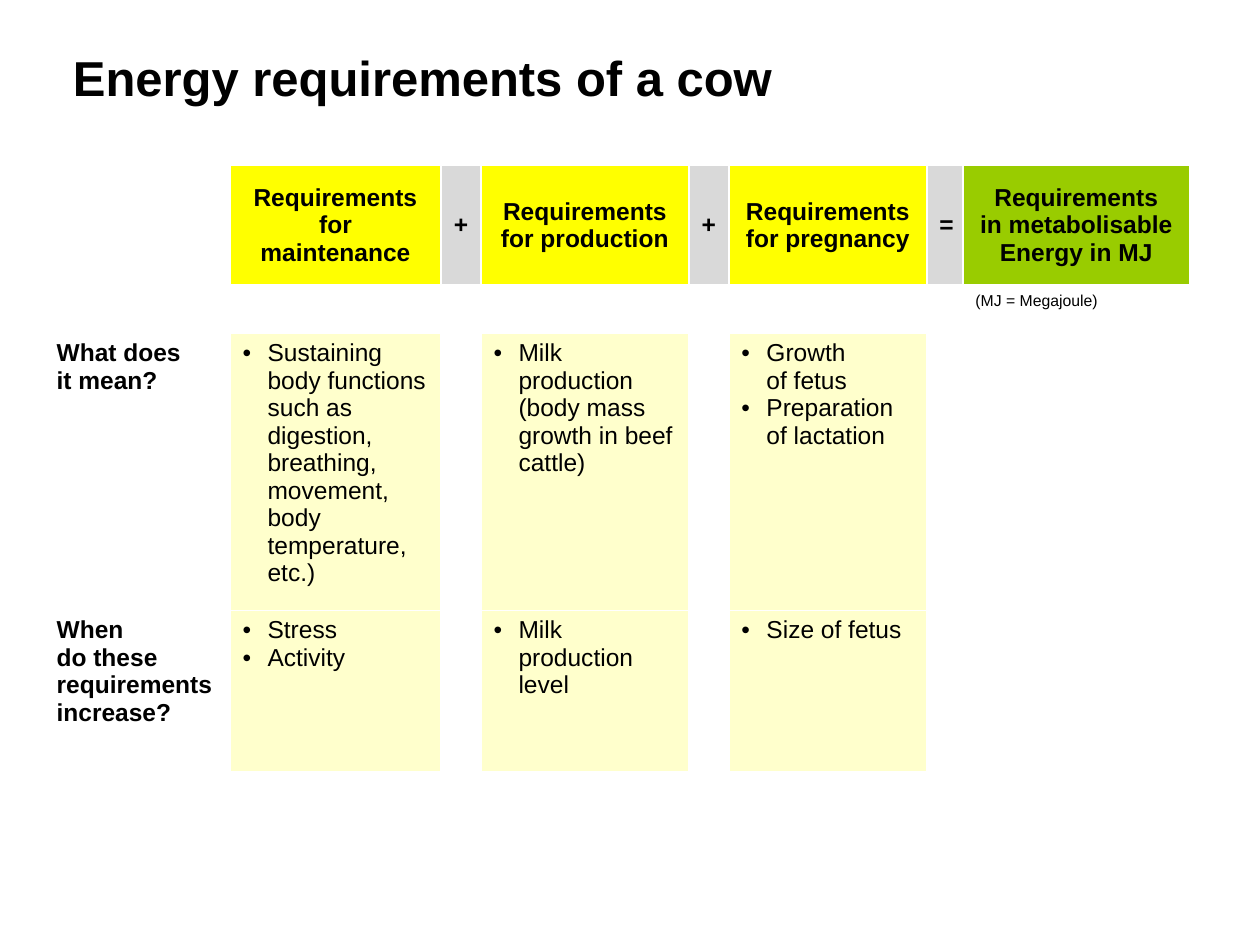
from lxml import etree
from pptx import Presentation
from pptx.dml.color import RGBColor
from pptx.enum.text import MSO_ANCHOR, PP_ALIGN
from pptx.oxml.ns import qn
from pptx.util import Pt

PX = 914400 // 126
MIDDLE, TOP = MSO_ANCHOR.MIDDLE, MSO_ANCHOR.TOP
CENTER, LEFT = PP_ALIGN.CENTER, PP_ALIGN.LEFT
THEME = {
    "font": "Arial", "ink": "000000", "line": "FFFFFF",
    "need": "FFFF00", "sign": "D9D9D9", "sum": "99CC00", "note": "FFFFCC",
    "title": 28, "body": 14, "small": 9,
}


def style(par, size, bold):
    font = par.font
    font.name, font.size, font.bold = THEME["font"], Pt(size), bold
    font.color.rgb = RGBColor.from_string(THEME["ink"])


def border(cell, side, width):
    line = etree.SubElement(cell._tc.get_or_add_tcPr(), qn("a:ln" + side), w=str(Pt(width)))
    fill = etree.SubElement(line, qn("a:solidFill"))
    etree.SubElement(fill, qn("a:srgbClr"), val=THEME["line"])


deck = Presentation()
deck.slide_width, deck.slide_height = 1260 * PX, 945 * PX
slide = deck.slides.add_slide(deck.slide_layouts[6])

# Title
box = slide.shapes.add_textbox(73 * PX, 32 * PX, 1136 * PX, 96 * PX)
frame = box.text_frame
frame.word_wrap = True
frame.vertical_anchor = MIDDLE
frame.margin_left = frame.margin_top = 0
frame.paragraphs[0].text = "Energy requirements of a cow"
style(frame.paragraphs[0], THEME["title"], True)

# Table text: one list of paragraphs per filled cell, \v breaks a line
HEAD = [
    "", "Requirements\vfor maintenance", "+", "Requirements for production", "+",
    "Requirements\vfor pregnancy", "=", "Requirements\vin metabolisable Energy in MJ",
]
FILLS = [None, "need", "sign", "need", "sign", "need", "sign", "sum"]
CELLS = {(0, col): [text] for col, text in enumerate(HEAD)}
CELLS.update({
    (1, 7): ["(MJ = Megajoule)"],
    (2, 0): ["What does\vit mean?"],
    (2, 1): ["Sustaining body functions such as digestion, breathing, "
             "movement, body \vtemperature, etc.)"],
    (2, 3): ["Milk production \v(body mass growth in beef cattle)"],
    (2, 5): ["Growth \vof fetus", "Preparation of lactation"],
    (3, 0): ["When \vdo these requirements increase?"],
    (3, 1): ["Stress", "Activity"],
    (3, 3): ["Milk production level"],
    (3, 5): ["Size of fetus"],
})
WIDTHS = [186, 211, 40, 208, 40, 198, 36, 227]
HEIGHTS = [121, 47, 270, 161]

# Table grid
table = slide.shapes.add_table(
    len(HEIGHTS), len(WIDTHS), 44 * PX, 165 * PX, sum(WIDTHS) * PX, sum(HEIGHTS) * PX
).table
table.first_row = table.horz_banding = False
for col, width in enumerate(WIDTHS):
    table.columns[col].width = width * PX
for row, height in enumerate(HEIGHTS):
    table.rows[row].height = height * PX

# Table cells
for row in range(len(HEIGHTS)):
    for col in range(len(WIDTHS)):
        cell = table.cell(row, col)
        head = row == 0
        note = row > 1 and col in (1, 3, 5)
        for side in "LRTB":
            thick = (row, side) in ((0, "B"), (1, "T"))
            border(cell, side, 3 if thick else 1)
        fill = FILLS[col] if head else "note" if note else None
        if fill:
            cell.fill.solid()
            cell.fill.fore_color.rgb = RGBColor.from_string(THEME[fill])
        else:
            cell.fill.background()
        cell.vertical_anchor = MIDDLE if head else TOP
        size = THEME["small"] if row == 1 else THEME["body"]
        for index, text in enumerate(CELLS.get((row, col), [""])):
            frame = cell.text_frame
            par = frame.add_paragraph() if index else frame.paragraphs[0]
            par.text = text
            par.alignment = CENTER if head else LEFT
            if note:
                props = par._p.get_or_add_pPr()
                props.set("marL", str(25 * PX))
                props.set("indent", str(-25 * PX))
                etree.SubElement(props, qn("a:buFont"), typeface=THEME["font"])
                etree.SubElement(props, qn("a:buChar"), char="•")
            style(par, size, head or col == 0)
            if not text:
                etree.SubElement(par._p, qn("a:endParaRPr"), sz=str(size * 100))

deck.save("out.pptx")
